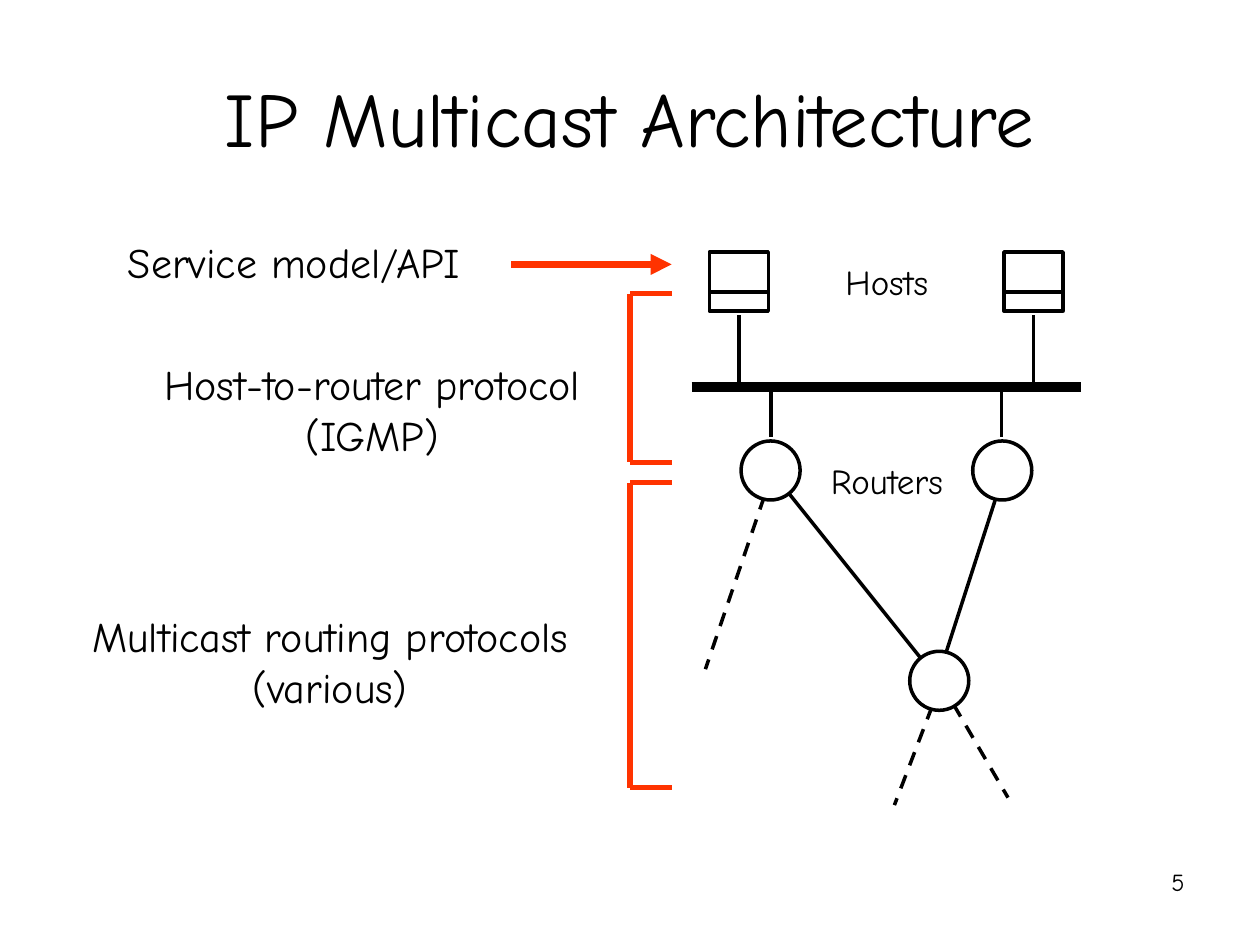
from lxml.etree import SubElement
from pptx import Presentation
from pptx.dml.color import RGBColor
from pptx.enum.dml import MSO_LINE
from pptx.enum.shapes import MSO_CONNECTOR, MSO_SHAPE
from pptx.enum.text import MSO_ANCHOR, PP_ALIGN
from pptx.oxml.ns import qn
from pptx.util import Cm, Pt

BLACK = RGBColor(0x00, 0x00, 0x00)
WHITE = RGBColor(0xFF, 0xFF, 0xFF)
RED = RGBColor(0xFF, 0x33, 0x00)
FONT = "Comic Neue"

# Content; all lengths in cm
TITLE = (["IP Multicast Architecture"], 1.27, 0.76, 22.86, 3.18, 44)
PAGE_NUMBER = (["5"], 18.21, 17.35, 5.92, 1.32, 14)
LABELS = [  # lines, left, top, width, height, font size
    (["Hosts"], 16.66, 5.13, 2.44, 1.09, 20),
    (["Routers"], 16.33, 9.14, 3.1, 1.09, 20),
    (["Service model/API"], 1.93, 4.65, 8, 1.27, 24),
    (["Host-to-router protocol", "(IGMP)"], 2.49, 7.11, 10.03, 2.29, 24),
    (["Multicast routing protocols", "(various)"], 1.04, 12.19, 11.23, 2.29, 24),
]
NODE_SIZE = 1.19
HOST_TOP, HOST_LEFTS = 5.08, [14.3, 20.24]
BUS_Y, BUS_LEFT, BUS_RIGHT = 7.8, 13.94, 21.79
STUB_XS = [15.54, 20.19]
ROUTERS = [(14.94, 8.89), (19.61, 8.89), (18.34, 13.13)]
LEFT_ROUTER, RIGHT_ROUTER = (15.57, 9.53), (20.24, 9.53)
LOWER_ROUTER, LOWER_EXIT = (18.9, 13.69), (18.97, 13.77)
LINKS = [(RIGHT_ROUTER, LOWER_ROUTER), (LEFT_ROUTER, LOWER_ROUTER)]
DASHED_LINKS = [
    (LEFT_ROUTER, (14.22, 13.49)),
    (LOWER_EXIT, (18.03, 16.23)),
    (LOWER_EXIT, (20.32, 16.08)),
]
BRACKET_X, BRACKET_TIP = 12.7, 13.54
BRACKETS = [(5.92, 9.32), (9.73, 15.88)]  # top, bottom
ARROW = ((10.31, 5.33), (BRACKET_TIP, 5.33))


def add_label(page, label, align=PP_ALIGN.CENTER, anchor=MSO_ANCHOR.TOP, wrap=False):
    lines, left, top, width, height, size = label
    box = page.shapes.add_textbox(Cm(left), Cm(top), Cm(width), Cm(height))
    frame = box.text_frame
    frame.word_wrap = wrap
    frame.vertical_anchor = anchor
    para = frame.paragraphs[0]
    para.alignment = align
    for index, line in enumerate(lines):
        if index:
            para.add_line_break()
        para.add_run().text = line
    para.font.name = FONT
    para.font.size = Pt(size)
    para.font.color.rgb = BLACK


def add_line(page, start, end, color=BLACK, width=2, dashed=False, arrow=False):
    points = [Cm(value) for value in (*start, *end)]
    line = page.shapes.add_connector(MSO_CONNECTOR.STRAIGHT, *points)
    line.line.color.rgb = color
    line.line.width = Pt(width)
    if dashed:
        line.line.dash_style = MSO_LINE.DASH
    if arrow:
        SubElement(line.line._get_or_add_ln(), qn("a:tailEnd"), type="triangle")
    SubElement(line._element.spPr, qn("a:effectLst"))


def add_node(page, kind, left, top):
    node = page.shapes.add_shape(kind, Cm(left), Cm(top), Cm(NODE_SIZE), Cm(NODE_SIZE))
    node.shadow.inherit = False
    node.fill.solid()
    node.fill.fore_color.rgb = WHITE
    node.line.color.rgb = BLACK
    node.line.width = Pt(2)


def main():
    deck = Presentation()
    deck.slide_width, deck.slide_height = Cm(25.4), Cm(19.05)
    page = deck.slides.add_slide(deck.slide_layouts[6])

    # Title, page number and labels
    add_label(page, TITLE, anchor=MSO_ANCHOR.MIDDLE, wrap=True)
    add_label(page, PAGE_NUMBER, align=PP_ALIGN.RIGHT, wrap=True)
    for label in LABELS:
        add_label(page, label)

    # Hosts, each with a divider and a drop to the bus
    for left in HOST_LEFTS:
        add_node(page, MSO_SHAPE.RECTANGLE, left, HOST_TOP)
        divider_y, center = HOST_TOP + 0.81, left + NODE_SIZE / 2
        add_line(page, (left, divider_y), (left + NODE_SIZE, divider_y))
        add_line(page, (center, HOST_TOP + 1.27), (center, BUS_Y))

    # Bus and the stubs down to the routers
    add_line(page, (BUS_LEFT, BUS_Y), (BUS_RIGHT, BUS_Y), width=6)
    for x in STUB_XS:
        add_line(page, (x, BUS_Y), (x, 8.81))

    # Links first, so that the routers cover their ends
    for start, end in LINKS:
        add_line(page, start, end)
    for start, end in DASHED_LINKS:
        add_line(page, start, end, dashed=True)
    for left, top in ROUTERS:
        add_node(page, MSO_SHAPE.OVAL, left, top)

    # Red arrow and brackets
    add_line(page, *ARROW, color=RED, width=4, arrow=True)
    for top, bottom in BRACKETS:
        add_line(page, (BRACKET_X, top), (BRACKET_X, bottom), RED, 3)
        for y in (top, bottom):
            add_line(page, (BRACKET_X, y), (BRACKET_TIP, y), RED, 3)

    deck.save("out.pptx")


if __name__ == "__main__":
    main()
